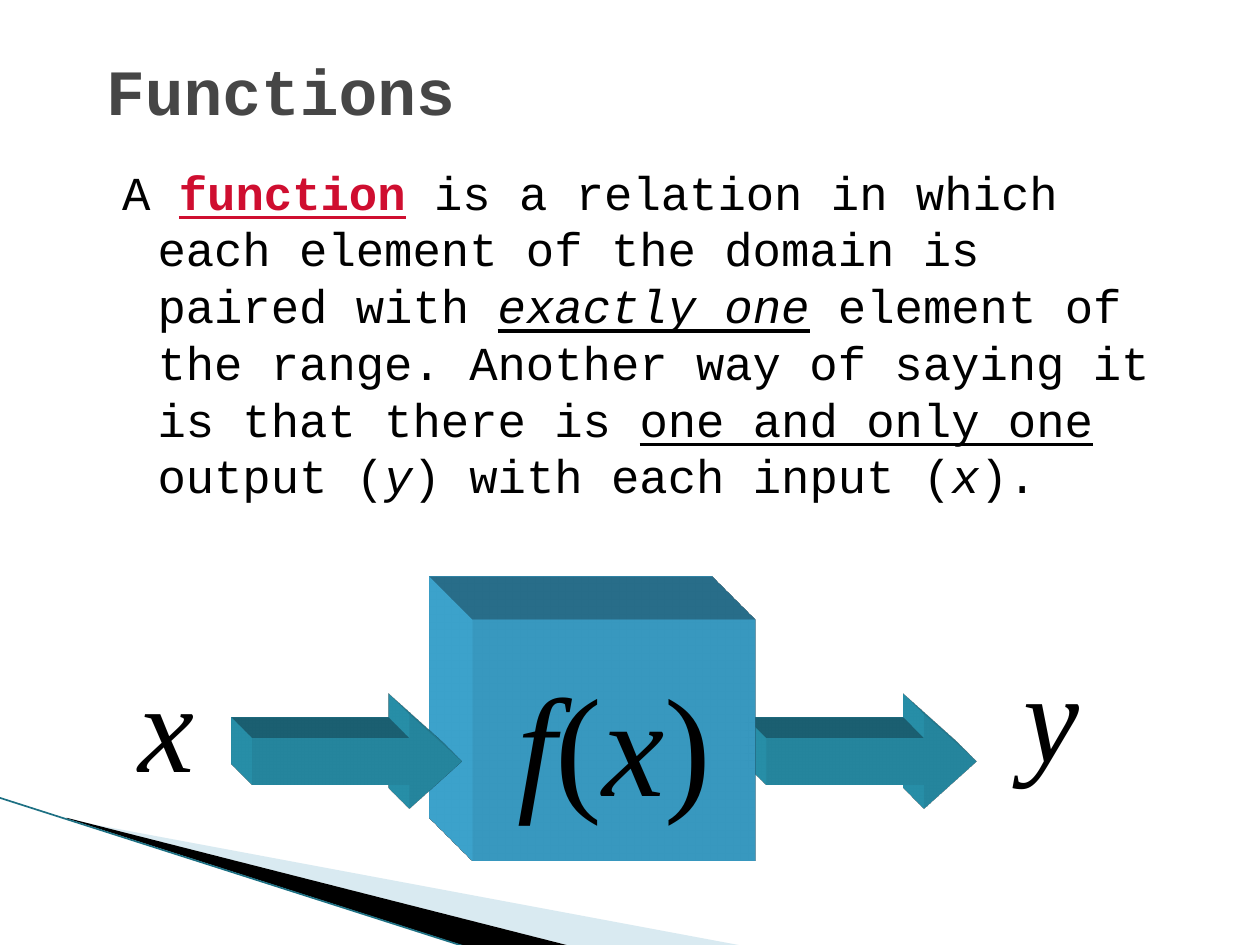
from lxml.etree import SubElement as Sub
from pptx import Presentation as Deck
from pptx.dml.color import RGBColor as RGB
from pptx.enum.shapes import MSO_CONNECTOR as Link, MSO_SHAPE as Kind
from pptx.enum.text import MSO_ANCHOR as Anchor, MSO_AUTO_SIZE as Auto, PP_ALIGN as Align
from pptx.oxml import parse_xml as to_xml
from pptx.oxml.ns import nsdecls as spaces, qn
from pptx.util import Pt

BLACK = RGB(0, 0, 0)
GRAY = RGB(0x46, 0x46, 0x46)
RED = RGB(0xCF, 0x0E, 0x30)
BLUE = RGB(0x44, 0xB9, 0xE8)
TEAL = RGB(0x2D, 0xA2, 0xBF)
PALE = RGB(0xA0, 0xCB, 0xDC)
EDGE = RGB(0x1D, 0x70, 0x83)
MONO = "Courier New"
SERIF = "Times New Roman"


def put(item, vals):
    for key, val in vals.items():
        setattr(item, key, val)


def place(item, box):
    put(item, dict(zip(("left", "top", "width", "height"), map(Pt, box))))


def write(para, runs, size, face):
    for text, form in runs:
        run = para.add_run()
        run.text = text
        form = dict(form)
        run.font.color.rgb = form.pop("color", BLACK)
        put(run.font, {"size": Pt(size), "name": face, **form})


def paint(shape, color):
    shape.fill.solid()
    shape.fill.fore_color.rgb = color
    shape.line.fill.background()
    shape.shadow.inherit = False


def wedge(slide, points, color, alpha=None):
    first, *rest = [(Pt(x), Pt(y)) for x, y in points]
    pen = slide.shapes.build_freeform(*first)
    pen.add_line_segments(rest)
    shape = pen.convert_to_shape()
    paint(shape, color)
    if alpha:
        tint = shape.fill._xPr.find(".//" + qn("a:srgbClr"))
        Sub(tint, qn("a:alpha"), val=str(alpha * 1000))


def corner(slide, box):
    left, top, wide, high = box
    low = top + high

    def at(x, y):
        return left + x, top + y

    wedge(slide, [at(40, 12.7), (left + wide, low), (left + 329, low), at(40, 12)], PALE, 40)
    wedge(slide, [at(38.5, 11.5), (left + 329, low), (left + 268, low), at(39, 12)], BLACK)
    line = slide.shapes.add_connector(Link.STRAIGHT, Pt(left), Pt(top), Pt(left + 267), Pt(low))
    line.line.color.rgb = EDGE
    line.line.width = Pt(0.95)
    Sub(line._element.spPr, qn("a:effectLst"))


def extrude(shape, color, depth):
    spot = shape._element.spPr
    spot.append(to_xml(
        f'<a:scene3d {spaces("a")}><a:camera prst="legacyObliqueTopLeft"/>'
        '<a:lightRig rig="legacyFlat3" dir="b"/></a:scene3d>'))
    spot.append(to_xml(
        f'<a:sp3d {spaces("a")} extrusionH="{Pt(depth)}" prstMaterial="legacyMatte">'
        f'<a:extrusionClr><a:srgbClr val="{color}"/></a:extrusionClr></a:sp3d>'))


def block(slide, kind, box, color, depth):
    shape = slide.shapes.add_shape(kind, *map(Pt, box))
    paint(shape, color)
    extrude(shape, color, depth)
    return shape


def arrow(slide, box):
    shape = block(slide, Kind.RIGHT_ARROW, box, TEAL, 33.87)
    shape.adjustments[1] = 0.556


def label(slide, box, text, wrap):
    frame = slide.shapes.add_textbox(*map(Pt, box)).text_frame
    put(frame, {"word_wrap": wrap, "auto_size": Auto.SHAPE_TO_FIT_TEXT})
    para = frame.paragraphs[0]
    para.alignment = Align.CENTER
    write(para, [(text, {"italic": True})], 72, SERIF)


def heading(slide, box):
    title = slide.shapes.title
    place(title, box)
    put(title.text_frame, {"vertical_anchor": Anchor.MIDDLE, "auto_size": Auto.NONE})
    para = title.text_frame.paragraphs[0]
    para.alignment = Align.LEFT
    write(para, [("Functions", {"bold": True, "color": GRAY})], 36.9, MONO)


def meaning(slide, box):
    body = slide.placeholders[1]
    place(body, box)
    put(body.text_frame, {"margin_top": Pt(3.1), "auto_size": Auto.NONE})
    para = body.text_frame.paragraphs[0]
    props = para._p.get_or_add_pPr()
    put(para, {"space_before": Pt(0), "line_spacing": 1.0})
    props.set("marL", str(Pt(28.8)))
    props.set("indent", str(Pt(-20.16)))
    Sub(props, qn("a:buNone"))
    slant, under = {"italic": True}, {"underline": True}
    write(para, [
        ("A ", {}),
        ("function", {"bold": True, "color": RED, **under}),
        (" is a relation in which each element of the domain is paired with ", {}),
        ("exactly one", {**slant, **under}),
        (" element of the range. Another way of saying it is that there is ", {}),
        ("one and only one", under),
        (" output (", {}),
        ("y", slant),
        (") with each input (", {}),
        ("x", slant),
        (").", {}),
    ], 27, MONO)


def machine(slide, box):
    left, top, wide, high = box
    row = top + 54
    arrow(slide, (left + 365.76, row, 120, 54))
    cube = block(slide, Kind.RECTANGLE, (left + 198, top, 162, high), BLUE, 69.87)
    put(cube.text_frame, {"word_wrap": False, "vertical_anchor": Anchor.MIDDLE})
    para = cube.text_frame.paragraphs[0]
    para.alignment = Align.CENTER
    slant = {"italic": True}
    write(para, [("f", slant), ("(", {}), ("x", slant), (")", {})], 80, SERIF)
    label(slide, (left, top + 12, 46.8, 93.6), "x", False)
    label(slide, (left + wide - 70.56, top + 6, 70.56, 93.6), "y", True)
    arrow(slide, (left + 72, row, 120, 54))


def main():
    deck = Deck()
    put(deck, {"slide_width": Pt(720), "slide_height": Pt(540)})
    slide = deck.slides.add_slide(deck.slide_layouts[1])
    corner(slide, (-0.5, 455.8, 429, 85.4))
    heading(slide, (53.5, 24, 612, 54))
    meaning(slide, (54, 90, 612, 324))
    machine(slide, (72, 354, 564, 138))
    deck.save("out.pptx")


if __name__ == "__main__":
    main()
